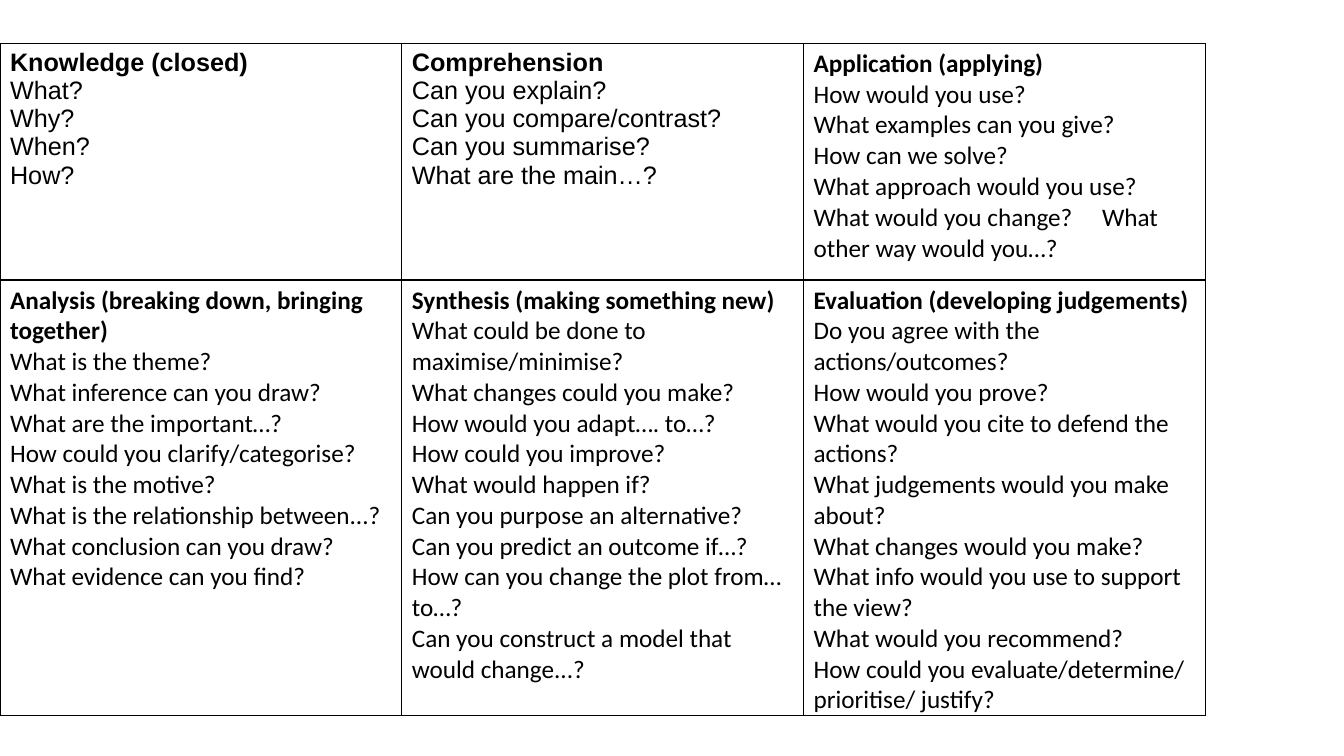
"""Build a slide with a grid of question stems for six levels of thinking."""
from dataclasses import dataclass

from lxml.etree import SubElement
from pptx import Presentation
from pptx.dml.color import RGBColor
from pptx.enum.text import PP_ALIGN
from pptx.oxml.ns import qn
from pptx.slide import Slide
from pptx.table import _Cell
from pptx.util import Length, Pt


@dataclass(frozen=True)
class Theme:
    text: str = "000000"
    border: str = "000000"
    size: Length = Pt(18)
    border_width: Length = Pt(1)
    body_font: str = "Calibri"
    plain_font: str = "Arial"


@dataclass(frozen=True)
class Level:
    heading: str
    questions: tuple[str, ...]
    font: str = Theme.body_font


THEME = Theme()
COLUMNS = 3
LEFT, TOP = Pt(0), Pt(31)
COLUMN_WIDTH = Pt(287)
ROW_HEIGHTS = (Pt(169), Pt(310))
TAB_STOP = Pt(206)

LEVELS = (
    Level("Knowledge (closed)", ("What?", "Why?", "When?", "How?"), THEME.plain_font),
    Level("Comprehension", (
        "Can you explain?",
        "Can you compare/contrast?",
        "Can you summarise?",
        "What are the main…?",
    ), THEME.plain_font),
    Level("Application (applying)", (
        "How would you use?",
        "What examples can you give?",
        "How can we solve?",
        "What approach would you use?",
        "What would you change?\tWhat other way would you…?",
    )),
    Level("Analysis (breaking down, bringing together)", (
        "What is the theme?",
        "What inference can you draw?",
        "What are the important…?",
        "How could you clarify/categorise?",
        "What is the motive?",
        "What is the relationship between...?",
        "What conclusion can you draw?",
        "What evidence can you find?",
    )),
    Level("Synthesis (making something new)", (
        "What could be done to maximise/minimise?",
        "What changes could you make?",
        "How would you adapt…. to…?",
        "How could you improve?",
        "What would happen if?",
        "Can you purpose an alternative?",
        "Can you predict an outcome if…?",
        "How can you change the plot from…to…?",
        "Can you construct a model that would change...?",
    )),
    Level("Evaluation (developing judgements)", (
        "Do you agree with the actions/outcomes?",
        "How would you prove?",
        "What would you cite to defend the actions?",
        "What judgements would you make about?",
        "What changes would you make?",
        "What info would you use to support the view?",
        "What would you recommend?",
        "How could you evaluate/determine/ prioritise/ justify?",
    )),
)


def write(p, text: str, *, font: str, bold: bool = False) -> None:
    if "\t" in text:
        tabs = SubElement(p._p.get_or_add_pPr(), qn("a:tabLst"))
        SubElement(tabs, qn("a:tab"), pos=str(TAB_STOP), algn="l")
    p.alignment = PP_ALIGN.LEFT
    r = p.add_run()
    r.text = text
    r.font.name = font
    r.font.size = THEME.size
    r.font.bold = bold
    r.font.color.rgb = RGBColor.from_string(THEME.text)


def set_borders(cell: _Cell) -> None:
    tc_pr = cell._tc.get_or_add_tcPr()
    for side in ("lnL", "lnR", "lnT", "lnB"):
        ln = SubElement(tc_pr, qn(f"a:{side}"), w=str(THEME.border_width))
        fill = SubElement(ln, qn("a:solidFill"))
        SubElement(fill, qn("a:srgbClr"), val=THEME.border)


def fill_cell(cell: _Cell, level: Level) -> None:
    set_borders(cell)
    cell.fill.background()
    cell.margin_left = cell.margin_right = Pt(7.2)
    cell.margin_top, cell.margin_bottom = Pt(3.6), Pt(0)
    tf = cell.text_frame
    write(tf.paragraphs[0], level.heading, font=level.font, bold=True)
    for question in level.questions:
        write(tf.add_paragraph(), question, font=level.font)


def add_levels_table(s: Slide) -> None:
    table = s.shapes.add_table(
        len(ROW_HEIGHTS), COLUMNS, LEFT, TOP, COLUMN_WIDTH * COLUMNS, sum(ROW_HEIGHTS)
    ).table
    table.first_row = table.horz_banding = False
    for column in table.columns:
        column.width = COLUMN_WIDTH
    for row, height in zip(table.rows, ROW_HEIGHTS):
        row.height = height
    for cell, level in zip(table.iter_cells(), LEVELS):
        fill_cell(cell, level)


def main() -> None:
    prs = Presentation()
    prs.slide_width, prs.slide_height = Pt(960), Pt(540)
    s = prs.slides.add_slide(prs.slide_layouts[6])
    add_levels_table(s)
    prs.save("out.pptx")


if __name__ == "__main__":
    main()
